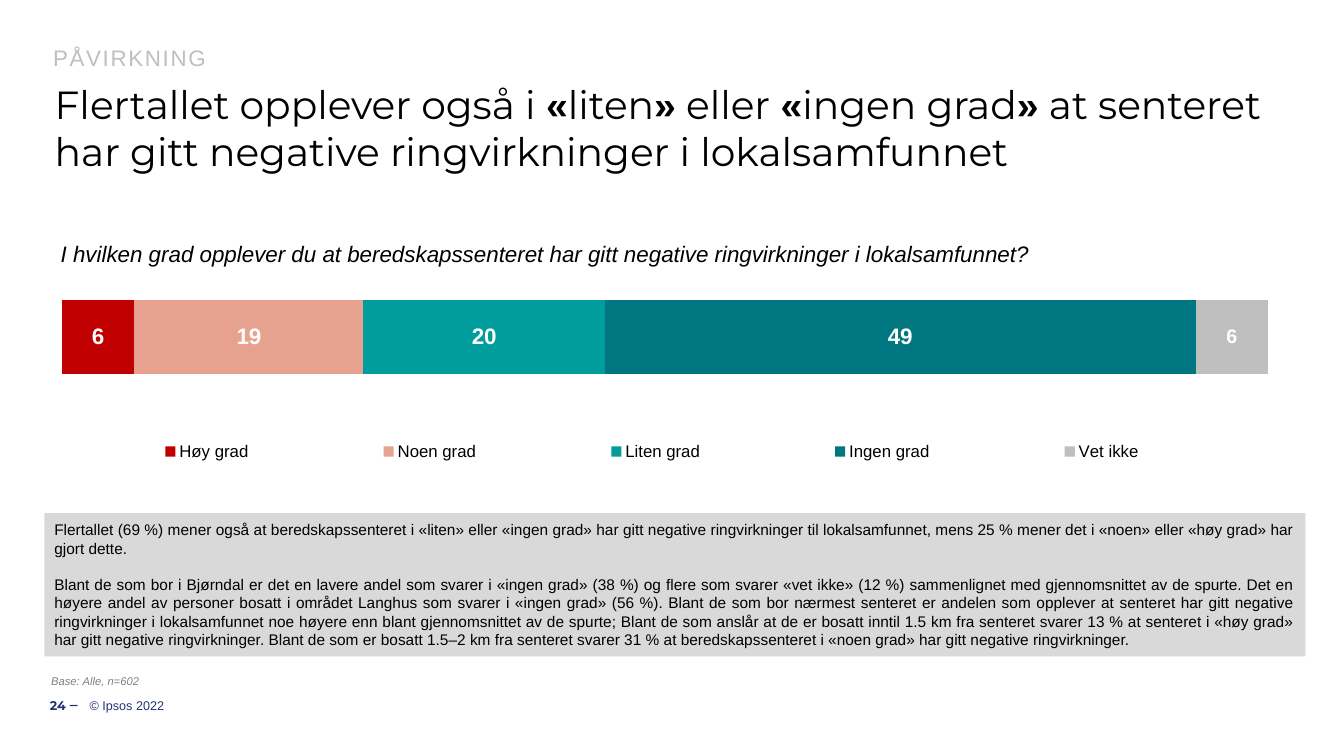
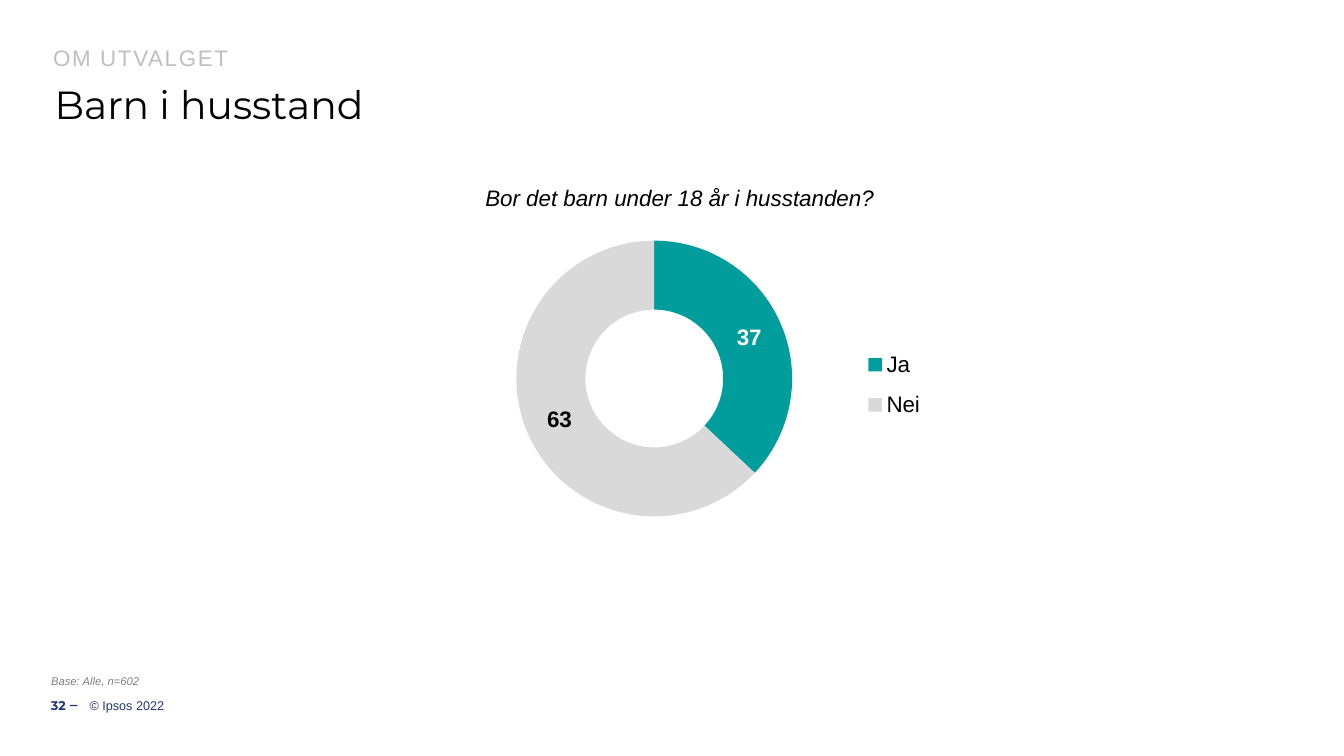
"""Build two survey result slides: a stacked bar and a doughnut."""
from lxml.etree import SubElement
from pptx import Presentation
from pptx.chart.data import CategoryChartData
from pptx.dml.color import RGBColor
from pptx.enum.chart import XL_CHART_TYPE, XL_LABEL_POSITION, XL_LEGEND_POSITION
from pptx.enum.shapes import MSO_SHAPE
from pptx.enum.text import MSO_ANCHOR, PP_ALIGN
from pptx.oxml.ns import qn
from pptx.util import Cm, Pt

BLACK = RGBColor(0x00, 0x00, 0x00)
WHITE = RGBColor(0xFF, 0xFF, 0xFF)
NAVY = RGBColor(0x23, 0x34, 0x75)
NOTE_GRAY = RGBColor(0x80, 0x80, 0x80)
SILVER = RGBColor(0xBF, 0xBF, 0xBF)
PALE_GRAY = RGBColor(0xD9, 0xD9, 0xD9)
RED = RGBColor(0xC0, 0x00, 0x00)
SALMON = RGBColor(0xE6, 0xA2, 0x8E)
TEAL = RGBColor(0x00, 0x9D, 0x9C)
DARK_TEAL = RGBColor(0x00, 0x76, 0x81)

BODY_FONT = "Arial"
TITLE_FONT = "Montserrat"

GRADES = [
    ("Høy grad", 6, RED, 16),
    ("Noen grad", 19, SALMON, 16),
    ("Liten grad", 20, TEAL, 16),
    ("Ingen grad", 49, DARK_TEAL, 16),
    ("Vet ikke", 6, SILVER, 14),
]
CHILDREN = [("Ja", 37, TEAL, WHITE), ("Nei", 63, PALE_GRAY, BLACK)]
COMMENTS = [
    "Flertallet (69 %) mener også at beredskapssenteret i «liten» eller «ingen grad» "
    "har gitt negative ringvirkninger til lokalsamfunnet, mens 25 % mener det i «noen» "
    "eller «høy grad» har gjort dette.",
    "Blant de som bor i Bjørndal er det en lavere andel som svarer i «ingen grad» (38 %) "
    "og flere som svarer «vet ikke» (12 %) sammenlignet med gjennomsnittet av de spurte. "
    "Det en høyere andel av personer bosatt i området Langhus som svarer i «ingen grad» "
    "(56 %). Blant de som bor nærmest senteret er andelen som opplever at senteret har "
    "gitt negative ringvirkninger i lokalsamfunnet noe høyere enn blant gjennomsnittet "
    "av de spurte; Blant de som anslår at de er bosatt inntil 1.5 km fra senteret svarer "
    "13 % at senteret i «høy grad» har gitt negative ringvirkninger. Blant de som er "
    "bosatt 1.5–2 km fra senteret svarer 31 % at beredskapssenteret i «noen grad» har "
    "gitt negative ringvirkninger.",
]


def style_font(font, size, color=BLACK, name=BODY_FONT, bold=False, italic=False):
    """Set the face, size, colour and style of a font."""
    font.name = name
    font.size = Pt(size)
    font.color.rgb = color
    font.bold = bold
    font.italic = italic


def add_text(page, left, top, width, height, text, size, margin=0.25,
             anchor=MSO_ANCHOR.TOP, **style):
    """Add a one-paragraph text box and return its paragraph."""
    box = page.shapes.add_textbox(left, top, width, height)
    frame = box.text_frame
    frame.word_wrap = True
    frame.vertical_anchor = anchor
    frame.margin_left = frame.margin_right = Cm(margin)
    frame.text = text
    para = frame.paragraphs[0]
    for span in para.runs:
        style_font(span.font, size, **style)
    return para


def add_header(page, left, top, width, section, headline):
    """Add the section name and, below it, a headline with bold Arial quotes."""
    para = add_text(page, left, top, width, Cm(0.86), section, 16,
                    margin=0.21, color=SILVER)
    para.line_spacing = 0.9
    para.runs[0].font._element.set("spc", "120")
    para = add_text(page, left, top + Cm(0.83), width, Cm(2.64), "", 28)
    for piece in headline:
        span = para.add_run()
        span.text = piece
        quote = piece in "«»"
        style_font(span.font, 28, name=BODY_FONT if quote else TITLE_FONT, bold=quote)


def add_footer(page, left, top, width, number):
    """Add the base note, page number and copyright line."""
    add_text(page, left, top, width, Cm(0.61), "Base: Alle, n=602", 8, margin=0.21,
             anchor=MSO_ANCHOR.BOTTOM, color=NOTE_GRAY, italic=True)
    line_top, line_height = top + Cm(0.43), Cm(1.02)
    para = add_text(page, left, line_top, Cm(0.98), line_height, f"{number} ‒ ", 9,
                    margin=0, anchor=MSO_ANCHOR.MIDDLE, color=NAVY,
                    name=TITLE_FONT, bold=True)
    para.alignment = PP_ALIGN.RIGHT
    add_text(page, left + Cm(1.18), line_top, Cm(29), line_height, "© Ipsos 2022", 9,
             margin=0, anchor=MSO_ANCHOR.MIDDLE, color=NAVY)


def add_comment(page, left, top, width, height):
    """Add the grey panel with justified comments."""
    panel = page.shapes.add_shape(MSO_SHAPE.RECTANGLE, left, top, width, height)
    panel.shadow.inherit = False
    panel.fill.solid()
    panel.fill.fore_color.rgb = PALE_GRAY
    panel.line.fill.background()
    frame = panel.text_frame
    frame.word_wrap = True
    frame.vertical_anchor = MSO_ANCHOR.MIDDLE
    frame.text = "\n".join(COMMENTS)
    for index, para in enumerate(frame.paragraphs):
        para.alignment = PP_ALIGN.JUSTIFY
        para.space_before = Pt(12.6 if index else 0)
        style_font(para.runs[0].font, 11)


def set_layout(parent, position, inner, x, y, w, h):
    """Place a plot area or legend by fractions of its chart."""
    for old in parent.findall(qn("c:layout")):
        parent.remove(old)
    layout = SubElement(parent, qn("c:layout"))
    parent.insert(position, layout)
    manual = SubElement(layout, qn("c:manualLayout"))
    values = [("xMode", "edge"), ("yMode", "edge"), ("x", x), ("y", y), ("w", w), ("h", h)]
    if inner:
        values.insert(0, ("layoutTarget", "inner"))
    for tag, value in values:
        SubElement(manual, qn(f"c:{tag}")).set("val", str(value))


def add_chart(page, box, kind, data, legend_position, legend_size, plot_box, legend_box):
    """Add a chart with its plot and legend placed by hand."""
    chart = page.shapes.add_chart(kind, *box, data).chart
    chart.has_title = False
    style_font(chart.font, 10)
    chart.has_legend = True
    chart.legend.position = legend_position
    chart.legend.include_in_layout = False
    style_font(chart.legend.font, legend_size)
    set_layout(chart.element.xpath("c:chart/c:plotArea")[0], 0, True, *plot_box)
    set_layout(chart.element.xpath("c:chart/c:legend")[0], 1, False, *legend_box)
    return chart


def paint(part, color):
    """Fill a series or point with one colour."""
    part.format.fill.solid()
    part.format.fill.fore_color.rgb = color


def add_grade_bar(page, *box):
    """Add the stacked bar of answers by grade."""
    data = CategoryChartData()
    data.categories = ["1"]
    for name, value, _, _ in GRADES:
        data.add_series(name, [value])
    chart = add_chart(page, box, XL_CHART_TYPE.BAR_STACKED_100, data,
                      XL_LEGEND_POSITION.BOTTOM, 12,
                      (0.04, 0.06, 0.93, 0.47), (0.02, 0.6, 0.95, 0.11))
    chart.category_axis.visible = False
    chart.value_axis.visible = False
    chart.value_axis.has_major_gridlines = False
    plot = chart.plots[0]
    plot.gap_width = 104
    plot.overlap = 100
    plot.vary_by_categories = False
    for series, (_, _, color, size) in zip(plot.series, GRADES):
        paint(series, color)
        labels = series.data_labels
        labels.show_value = True
        labels.position = XL_LABEL_POSITION.CENTER
        style_font(labels.font, size, WHITE, bold=True)


def add_children_ring(page, *box):
    """Add the doughnut of households with and without children."""
    data = CategoryChartData()
    data.categories = [name for name, _, _, _ in CHILDREN]
    data.add_series("Series 1", [value for _, value, _, _ in CHILDREN])
    chart = add_chart(page, box, XL_CHART_TYPE.DOUGHNUT, data,
                      XL_LEGEND_POSITION.RIGHT, 16,
                      (0.31, 0.04, 0.46, 0.66), (0.88, 0.27, 0.12, 0.23))
    chart.element.xpath(".//c:holeSize")[0].set("val", "62")
    plot = chart.plots[0]
    plot.vary_by_categories = True
    series = plot.series[0]
    series.data_labels.show_value = True
    series.data_labels.show_percentage = False
    style_font(series.data_labels.font, 16, WHITE, bold=True)
    for index, (_, _, color, label_color) in enumerate(CHILDREN):
        point = series.points[index]
        paint(point, color)
        style_font(point.data_label.font, 16, label_color, bold=True)


def add_page(deck, number, section, headline):
    """Add a blank page with the shared header and footer."""
    page = deck.slides.add_slide(deck.slide_layouts[6])
    add_header(page, Cm(1.13), Cm(1.07), Cm(32), section, headline)
    add_footer(page, Cm(1.08), Cm(16.84), Cm(31.85), number)
    return page


def add_impact_page(deck):
    """Add the page about negative effects on the community."""
    headline = ["Flertallet opplever også i ", "«", "liten", "»", " eller ", "«",
                "ingen grad", "»",
                " at senteret har gitt negative ringvirkninger i lokalsamfunnet"]
    page = add_page(deck, 24, "PÅVIRKNING", headline)
    add_text(page, Cm(1.28), Cm(5.92), Cm(27.8), Cm(1.5),
             "I hvilken grad opplever du at beredskapssenteret har gitt negative "
             "ringvirkninger i lokalsamfunnet?", 16, italic=True)
    add_comment(page, Cm(1.12), Cm(12.93), Cm(31.78), Cm(3.61))
    add_grade_bar(page, Cm(0.25), Cm(6.12), Cm(32.69), Cm(8.03))


def add_sample_page(deck):
    """Add the page about children in the household."""
    page = add_page(deck, 32, "OM UTVALGET", ["Barn i husstand"])
    add_children_ring(page, Cm(8.33), Cm(5.64), Cm(15.11), Cm(10.54))
    add_text(page, Cm(11.98), Cm(4.52), Cm(11), Cm(0.94),
             "Bor det barn under 18 år i husstanden?", 16, italic=True)


def main():
    """Build and save the deck."""
    deck = Presentation()
    deck.slide_width, deck.slide_height = Cm(33.87), Cm(19.05)
    add_impact_page(deck)
    add_sample_page(deck)
    deck.save("out.pptx")


if __name__ == "__main__":
    main()
